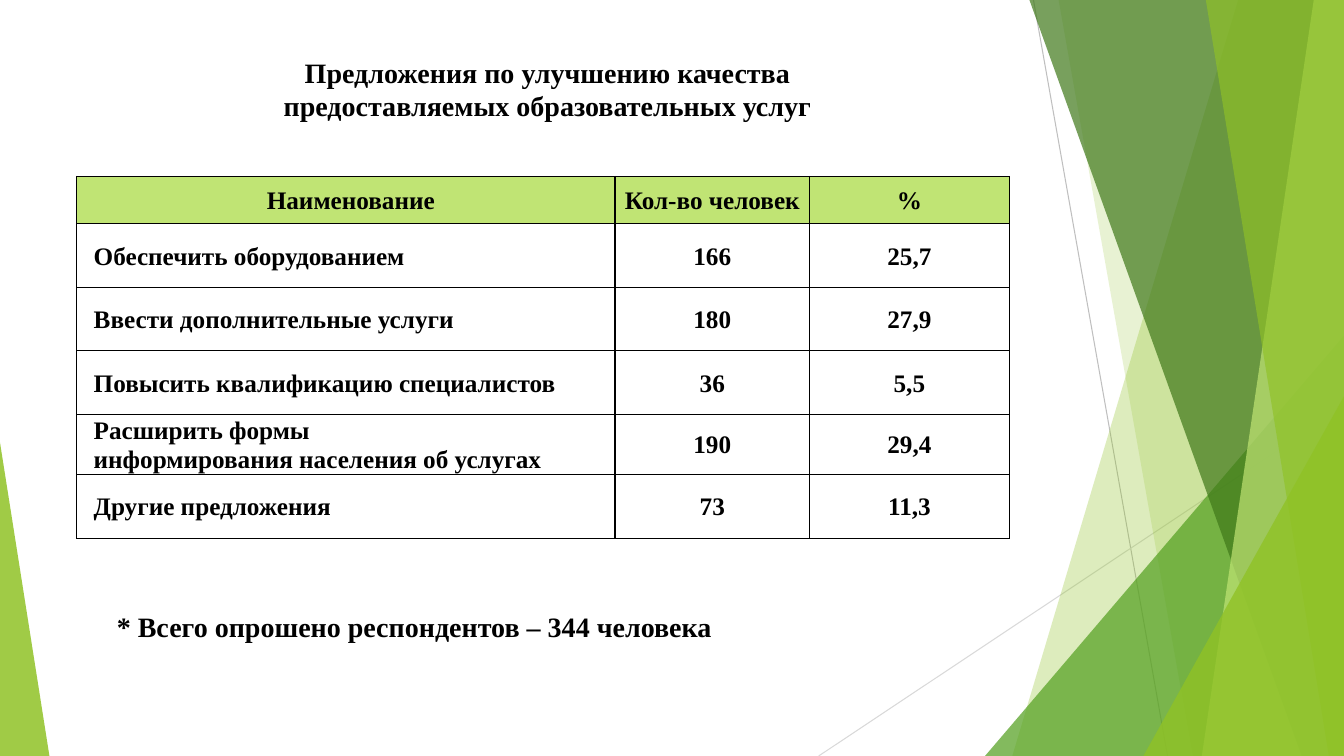
from lxml.etree import SubElement
from pptx import Presentation
from pptx.dml.color import RGBColor
from pptx.enum.shapes import MSO_CONNECTOR, MSO_SHAPE
from pptx.enum.text import MSO_ANCHOR, PP_ALIGN
from pptx.oxml.ns import qn
from pptx.util import Inches, Pt

COLORS = {
    "black": "000000", "lime": "90C226", "green": "54A021",
    "forest": "3F7819", "pale": "C0E474", "gray": "BFBFBF", "silver": "D9D9D9",
}
W, H = 13.33, 7.5
FONT = "Times New Roman"


def paint(sp, color, alpha):
    sp.shadow.inherit = False
    sp.line.fill.background()
    sp.fill.solid()
    sp.fill.fore_color.rgb = RGBColor.from_string(COLORS[color])
    clr = sp.fill._xPr.find(qn("a:solidFill"))[0]
    SubElement(clr, qn("a:alpha"), val=str(alpha * 1000))


def write(tf, text, size, align, indent=0, spacing=1.0):
    tf.text = text
    for p in tf.paragraphs:
        p.alignment = align
        p.line_spacing = spacing
        p.font.name = FONT
        p.font.size = Pt(size)
        p.font.bold = True
        p.font.color.rgb = RGBColor.from_string(COLORS["black"])
        if indent:
            p._p.get_or_add_pPr().set("marL", str(Inches(indent)))


prs = Presentation()
prs.slide_width, prs.slide_height = Inches(W), Inches(H)
s = prs.slides.add_slide(prs.slide_layouts[6])

for x1, y1, x2, y2, color in [
    (10.25, 0, 11.58, H, "gray"),
    (W, 4.03, 8.12, H, "silver"),
]:
    ln = s.shapes.add_connector(
        MSO_CONNECTOR.STRAIGHT, Inches(x1), Inches(y1), Inches(x2), Inches(y2))
    ln.line.color.rgb = RGBColor.from_string(COLORS[color])
    ln.line.width = Pt(0.75)
    SubElement(ln._element.spPr, qn("a:effectLst"))

facets = [
    ("band", 12.28, 10.04, "lime", 30),
    ("band", 10.5, 11.83, "lime", 20),
    ("corner", 9.77, 3.33, "green", 72),
    ("band", 10.21, 12.91, "forest", 70),
    ("band", 13.03, 11.92, "pale", 70),
    ("band", 11.96, 13.18, "lime", 65),
    ("corner", 11.34, 3.93, "lime", 80),
]
for kind, a, b, color, alpha in facets:
    if kind == "band":
        fb = s.shapes.build_freeform(Inches(a), 0)
        fb.add_line_segments(
            [(Inches(x), Inches(y)) for x, y in [(W, 0), (W, H), (b, H)]], close=True)
        sp = fb.convert_to_shape()
    else:
        sp = s.shapes.add_shape(
            MSO_SHAPE.ISOSCELES_TRIANGLE, Inches(a), Inches(b), Inches(W - a), Inches(H - b))
        sp.adjustments[0] = 1
    paint(sp, color, alpha)

sp = s.shapes.add_shape(
    MSO_SHAPE.ISOSCELES_TRIANGLE, 0, Inches(4.39), Inches(0.49), Inches(H - 4.39))
sp.adjustments[0] = 0
paint(sp, "lime", 85)

rows = [
    ("Наименование", "Кол-во человек", "%"),
    ("Обеспечить оборудованием", "166", "25,7"),
    ("Ввести дополнительные услуги", "180", "27,9"),
    ("Повысить квалификацию специалистов", "36", "5,5"),
    ("Расширить формы\nинформирования населения об услугах", "190", "29,4"),
    ("Другие предложения", "73", "11,3"),
]
widths = [5.34, 1.93, 1.98]
heights = [0.47, 0.63, 0.63, 0.63, 0.6, 0.63]
tbl = s.shapes.add_table(
    len(rows), len(widths), Inches(0.76), Inches(1.75),
    Inches(sum(widths)), Inches(sum(heights))).table
tbl.first_row = tbl.horz_banding = False
for col, width in zip(tbl.columns, widths):
    col.width = Inches(width)
for i, (values, height) in enumerate(zip(rows, heights)):
    tbl.rows[i].height = Inches(height)
    for j, value in enumerate(values):
        cell = tbl.cell(i, j)
        cell.vertical_anchor = MSO_ANCHOR.MIDDLE
        cell.margin_left = cell.margin_right = Inches(0.07)
        cell.margin_top = cell.margin_bottom = 0
        align = PP_ALIGN.JUSTIFY if i and not j else PP_ALIGN.CENTER
        write(cell.text_frame, value, 18, align, 0 if j else 0.1, 1.07)
        tcPr = cell._tc.get_or_add_tcPr()
        for side in ("lnL", "lnR", "lnT", "lnB"):
            ln = SubElement(tcPr, qn(f"a:{side}"), w=str(Pt(1)))
            SubElement(SubElement(ln, qn("a:solidFill")), qn("a:srgbClr"), val=COLORS["black"])
        if i:
            cell.fill.background()
        else:
            cell.fill.solid()
            cell.fill.fore_color.rgb = RGBColor.from_string(COLORS["pale"])

for x, y, w, h, text, align in [
    (0.77, 0.5, 9.32, 0.77,
     "Предложения по улучшению качества\nпредоставляемых образовательных услуг", PP_ALIGN.CENTER),
    (1.06, 6, 6.42, 0.44, "* Всего опрошено респондентов – 344 человека", PP_ALIGN.LEFT),
]:
    tf = s.shapes.add_textbox(Inches(x), Inches(y), Inches(w), Inches(h)).text_frame
    tf.word_wrap = True
    write(tf, text, 20, align)

prs.save("out.pptx")
